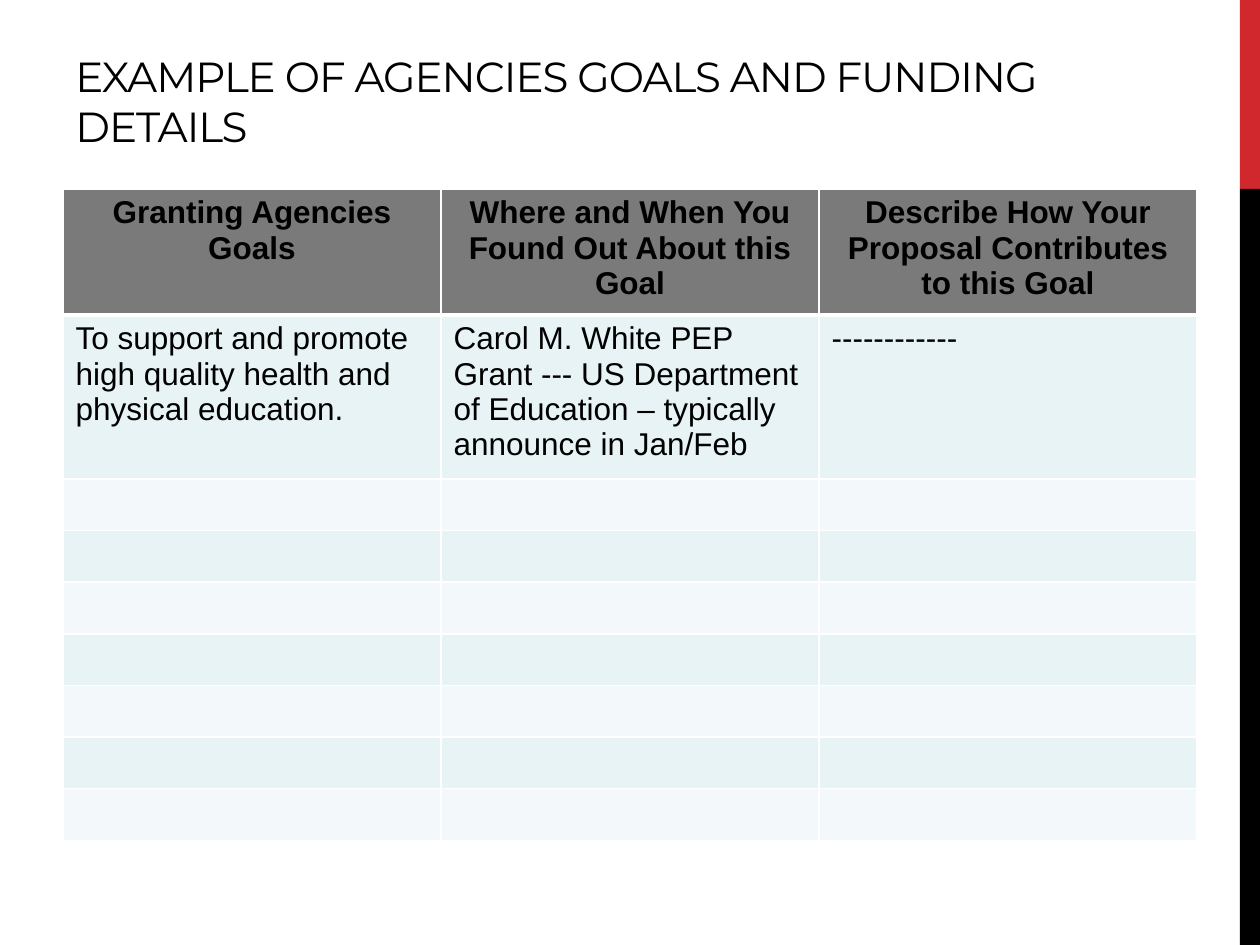
from dataclasses import dataclass

from lxml import etree
from pptx import Presentation
from pptx.dml.color import RGBColor
from pptx.enum.shapes import MSO_SHAPE
from pptx.enum.text import MSO_ANCHOR, PP_ALIGN
from pptx.oxml.ns import qn
from pptx.util import Inches, Pt

RECTANGLE = MSO_SHAPE.RECTANGLE
BOTTOM = MSO_ANCHOR.BOTTOM
LEFT, CENTER = PP_ALIGN.LEFT, PP_ALIGN.CENTER

COLORS = {
    "red": "D1282E",
    "black": "000000",
    "white": "FFFFFF",
    "header": "7A7A7A",
    "band_dark": "E7F3F4",
    "band_light": "F3F9FA",
}

TITLE = "EXAMPLE OF AGENCIES GOALS AND FUNDING DETAILS"
HEADINGS = [
    "Granting Agencies Goals",
    "Where and When You Found Out About this Goal",
    "Describe How Your Proposal Contributes to this Goal",
]
EXAMPLE = [
    "To support and promote high quality health and physical education.",
    "Carol M. White PEP Grant --- US Department of Education – typically announce in Jan/Feb",
    "------------",
]
EMPTY_ROWS = 7
ROWS = [HEADINGS, EXAMPLE] + [[""] * len(HEADINGS)] * EMPTY_ROWS
ROW_HEIGHTS = [0.99, 1.3] + [0.41] * EMPTY_ROWS
COLUMN_WIDTH = 3


@dataclass
class Bar:
    top: float
    height: float
    color: str


BARS = [Bar(0, 1.5, "red"), Bar(1.5, 6, "black")]


def rgb(name: str) -> RGBColor:
    return RGBColor.from_string(COLORS[name])


def add_bar(page, bar: Bar) -> None:
    shape = page.shapes.add_shape(
        RECTANGLE, Inches(9.84), Inches(bar.top), Inches(0.16), Inches(bar.height))
    shape.shadow.inherit = False
    shape.fill.solid()
    shape.fill.fore_color.rgb = rgb(bar.color)
    shape.line.fill.background()


def add_title(page) -> None:
    box = page.shapes.add_textbox(Inches(0.5), Inches(0.3), Inches(9), Inches(0.95))
    frame = box.text_frame
    frame.word_wrap = True
    frame.vertical_anchor = BOTTOM
    para = frame.paragraphs[0]
    span = para.add_run()
    span.text = TITLE
    span.font._element.set("spc", "-60")
    para.font.name = "Montserrat"
    para.font.size = Pt(24)
    para.font.color.rgb = rgb("black")


def set_border(cell, side: str, points: float) -> None:
    line = etree.SubElement(
        cell._tc.get_or_add_tcPr(), qn(f"a:ln{side}"), w=str(Pt(points)))
    fill = etree.SubElement(line, qn("a:solidFill"))
    etree.SubElement(fill, qn("a:srgbClr"), val=COLORS["white"])


def style_cell(cell, text: str, row: int) -> None:
    is_header = row == 0
    # The rule under the header is heavier than the other borders
    widths = {"L": 1, "R": 1, "T": 3 if row == 1 else 1, "B": 3 if is_header else 1}
    for side, points in widths.items():
        set_border(cell, side, points)
    cell.fill.solid()
    band = "band_dark" if row % 2 else "band_light"
    cell.fill.fore_color.rgb = rgb("header" if is_header else band)

    cell.text = text
    para = cell.text_frame.paragraphs[0]
    para.alignment = CENTER if is_header else LEFT
    para.font.name = "Arial"
    para.font.size = Pt(18)
    para.font.bold = is_header
    para.font.color.rgb = rgb("black")


def add_goals_table(page) -> None:
    table = page.shapes.add_table(
        len(ROWS), len(HEADINGS), Inches(0.5), Inches(1.5),
        Inches(COLUMN_WIDTH * len(HEADINGS)), Inches(sum(ROW_HEIGHTS))).table
    for column in table.columns:
        column.width = Inches(COLUMN_WIDTH)
    for row, (texts, height) in enumerate(zip(ROWS, ROW_HEIGHTS)):
        table.rows[row].height = Inches(height)
        for column, text in enumerate(texts):
            style_cell(table.cell(row, column), text, row)


def main() -> None:
    deck = Presentation()
    deck.slide_width, deck.slide_height = Inches(10), Inches(7.5)
    page = deck.slides.add_slide(deck.slide_layouts[6])

    # Bars along the right edge
    for bar in BARS:
        add_bar(page, bar)

    # Title and table
    add_title(page)
    add_goals_table(page)
    deck.save("out.pptx")


if __name__ == "__main__":
    main()
